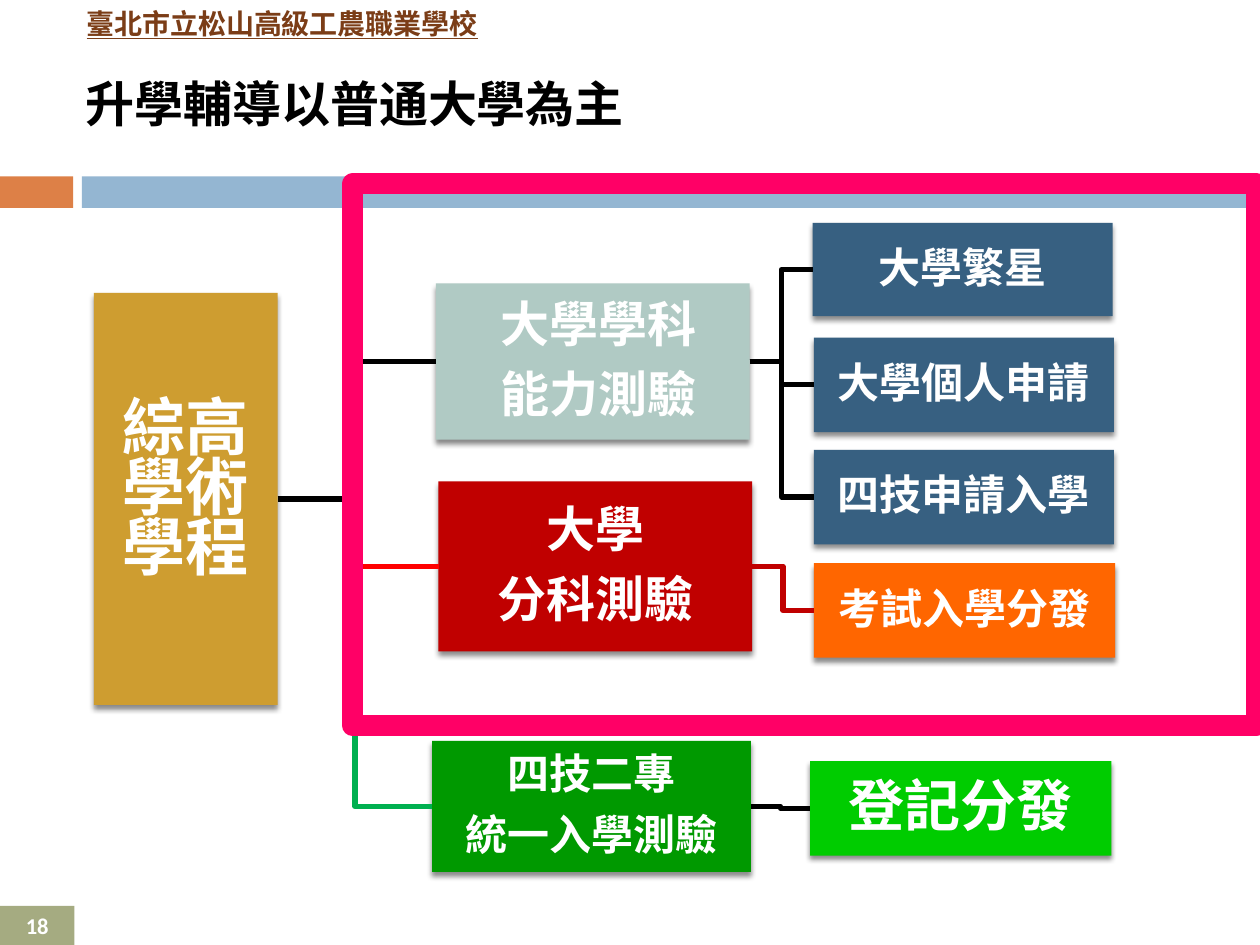
from lxml import etree
from pptx import Presentation
from pptx.dml.color import RGBColor
from pptx.enum.shapes import MSO_CONNECTOR, MSO_SHAPE
from pptx.enum.text import MSO_ANCHOR, PP_ALIGN
from pptx.oxml.ns import qn
from pptx.util import Inches, Pt

RECTANGLE = MSO_SHAPE.RECTANGLE
ELBOW = MSO_CONNECTOR.ELBOW
MIDDLE, TOP = MSO_ANCHOR.MIDDLE, MSO_ANCHOR.TOP
CENTER, LEFT = PP_ALIGN.CENTER, PP_ALIGN.LEFT
LEFT_SIDE, RIGHT_SIDE = 1, 3
SANS, CHINESE, JAPANESE = "Calibri", "Noto Sans CJK SC", "Noto Sans CJK JP"
COLORS = {
    "white": "FFFFFF", "black": "000000", "brown": "7B3D17",
    "copper": "DD8047", "sky": "94B6D2", "olive": "A5AB81",
    "gold": "CE9D30", "mint": "B0CAC4", "navy": "376081",
    "crimson": "C00000", "red": "FF0000", "orange": "FF6600",
    "green": "009900", "lime": "00CC00", "jade": "00B050", "pink": "FF0066",
}

deck = Presentation()
deck.slide_width, deck.slide_height = Inches(10), Inches(7.5)
page = deck.slides.add_slide(deck.slide_layouts[6])
COLUMN = deck.slide_width / 100
ROW = deck.slide_height / 75


def add_block(area, fill=None):
    left, top, width, height = area
    block = page.shapes.add_shape(
        RECTANGLE, round(left * COLUMN), round(top * ROW),
        round(width * COLUMN), round(height * ROW))
    block.shadow.inherit = False
    block.line.fill.background()
    if fill:
        block.fill.solid()
        block.fill.fore_color.rgb = RGBColor.from_string(COLORS[fill])
    else:
        block.fill.background()
    return block


def write(box, lines, size, face=SANS, color="white", spacing=None,
          align=CENTER, anchor=MIDDLE, underline=False):
    frame = box.text_frame
    frame.word_wrap = True
    frame.vertical_anchor = anchor
    look = {"size": Pt(size), "name": face, "bold": True, "underline": underline}
    for number, line in enumerate(lines):
        para = frame.add_paragraph() if number else frame.paragraphs[0]
        para.alignment = align
        if spacing:
            para.line_spacing = spacing
            para.space_after = Pt(0)
            after = para._p.pPr.find(qn("a:spcAft"))
            after.clear()
            etree.SubElement(after, qn("a:spcPct"), val="35000")
        span = para.add_run()
        span.text = line
        for key, value in look.items():
            setattr(span.font, key, value)
        span.font.color.rgb = RGBColor.from_string(COLORS[color])
        etree.SubElement(span._r.rPr, qn("a:ea"), typeface=face)


add_block((0, 14, 5.8, 2.5), "copper")
add_block((6.5, 14, 93.5, 2.5), "sky")
page_number = add_block((0, 71.9, 5.9, 3.1), "olive")
write(page_number, ["18"], 12.9)

headings = [
    ((5.9, 0, 33.4, 3.7), "臺北市立松山高級工農職業學校", 16,
     {"color": "brown", "align": LEFT, "anchor": TOP, "underline": True}),
    ((0, 3.1, 56.3, 10.2), "升學輔導以普通大學為主", 28, {"color": "black"}),
]
for (left, top, width, height), wording, size, look in headings:
    heading = page.shapes.add_textbox(
        round(left * COLUMN), round(top * ROW),
        round(width * COLUMN), round(height * ROW))
    write(heading, [wording], size, CHINESE, **look)

stages = {
    "program": ((7.45, 23.25, 14.6, 32.7), "gold", ["綜高", "學術", "學程"], 36, SANS, 0.5),
    "aptitude": ((34.6, 22.5, 24.9, 12.4), "mint", [" 大學學科", " 能力測驗"], 28, SANS, 0.9),
    "stars": ((64.5, 17.7, 23.8, 7.4), "navy", ["大學繁星"], 24, SANS, 0.9),
    "personal": ((64.6, 26.8, 23.8, 7.5), "navy", ["大學個人申請"], 24, SANS, 0.9),
    "technical": ((64.6, 35.7, 23.8, 7.5), "navy", ["四技申請入學"], 24, SANS, 0.9),
    "subjects": ((34.8, 38.2, 24.9, 13.5), "crimson", ["大學", "分科測驗"], 28, SANS, 0.9),
    "placement": ((64.6, 44.7, 23.9, 7.5), "orange", ["考試入學分發"], 24, SANS, 0.9),
    "unified": ((34.3, 58.8, 25.3, 10.4), "green", ["四技二專", "統一入學測驗"], 24, JAPANESE, 0.9),
    "register": ((64.3, 60.4, 23.9, 7.5), "lime", ["登記分發"], 32, JAPANESE, 0.9),
}
blocks = {}
for name, (area, fill, lines, size, face, spacing) in stages.items():
    block = add_block(area, fill)
    shade = etree.SubElement(
        block._element.spPr.find(qn("a:effectLst")), qn("a:outerShdw"),
        blurRad=str(Pt(3)), dist=str(Pt(2.4)), dir="5400000", rotWithShape="0")
    tint = etree.SubElement(shade, qn("a:srgbClr"), val=COLORS["black"])
    etree.SubElement(tint, qn("a:alpha"), val="45000")
    for side in ("left", "top", "right", "bottom"):
        setattr(block.text_frame, f"margin_{side}", round(0.2 * COLUMN))
    write(block, lines, size, face, spacing=spacing)
    blocks[name] = block

links = [
    ("unified", "register", "black", 3),
    ("program", "unified", "jade", 3),
    ("subjects", "placement", "crimson", 3),
    ("program", "subjects", "red", 3),
    ("aptitude", "technical", "black", 3),
    ("aptitude", "personal", "black", 3),
    ("aptitude", "stars", "black", 2.75),
    ("program", "aptitude", "black", 3),
]
for source, target, color, weight in links:
    link = page.shapes.add_connector(ELBOW, 0, 0, 0, 0)
    link.begin_connect(blocks[source], RIGHT_SIDE)
    link.end_connect(blocks[target], LEFT_SIDE)
    link.line.color.rgb = RGBColor.from_string(COLORS[color])
    link.line.width = Pt(weight)
    etree.SubElement(link._element.spPr, qn("a:effectLst"))

highlight = add_block((28, 14.6, 71.7, 43))
highlight.line.color.rgb = RGBColor.from_string(COLORS["pink"])
highlight.line.width = Pt(12)

deck.save("out.pptx")
